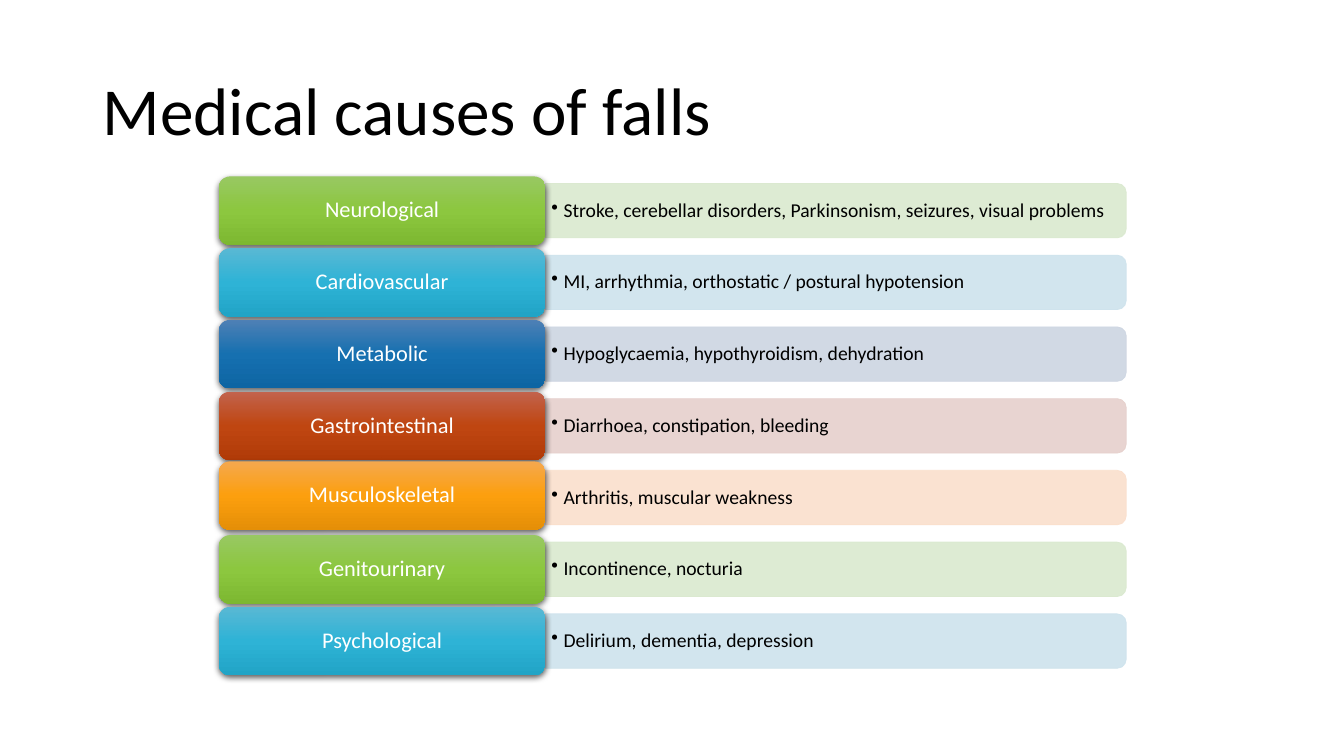
import pptx
import pptx.util
import pptx.oxml
import pptx.oxml.ns
import pptx.dml.color
import pptx.enum.shapes
import pptx.enum.text
import lxml.etree

Inches, Pt = pptx.util.Inches, pptx.util.Pt
qn = pptx.oxml.ns.qn
SHAPE = pptx.enum.shapes.MSO_SHAPE
ALIGN = pptx.enum.text.PP_ALIGN

TITLE = "Medical causes of falls"
CAUSES = [
    ("Neurological", "Stroke, cerebellar disorders, Parkinsonism, seizures, visual problems", "green"),
    ("Cardiovascular", "MI, arrhythmia, orthostatic / postural hypotension", "teal"),
    ("Metabolic", "Hypoglycaemia, hypothyroidism, dehydration", "blue"),
    ("Gastrointestinal", "Diarrhoea, constipation, bleeding", "red"),
    ("Musculoskeletal", "Arthritis, muscular weakness", "orange"),
    ("Genitourinary", "Incontinence, nocturia", "green"),
    ("Psychological", "Delirium, dementia, depression", "teal"),
]
COLORS = {"black": "000000", "white": "FFFFFF"}
TINTS = {"green": "DAE9CF", "teal": "CEE3ED", "blue": "CDD5E2",
         "red": "E6D0CC", "orange": "FADFCC"}
SHADES = {  # top, middle and bottom of each label
    "green": ("98C862", "8CC73F", "7DB831"),
    "teal": ("59B8D4", "2EB3D6", "21A4C6"),
    "blue": ("4E80B5", "1670B0", "0D65A3"),
    "red": ("C2634D", "BF4611", "B13B08"),
    "orange": ("F5A84E", "FC9F0E", "E58F07"),
}
FONT = "Calibri"
LEFT, TOP = 2.17, 1.75
LABEL_W, LABEL_H = 3.24, 0.68
BAR_W, BAR_H = 5.76, 0.54
TEXT_W, TEXT_H = 5.73, 0.49
PITCH = 4.27 / 6
LIFT = {"Musculoskeletal": 0.02}


def rgb(code):
    return pptx.dml.color.RGBColor.from_string(code)


def put_text(shape, text, size, color, align, pad):
    frame = shape.text_frame
    frame.word_wrap = True
    frame.vertical_anchor = pptx.enum.text.MSO_ANCHOR.MIDDLE
    frame.margin_left = frame.margin_right = Inches(pad[0])
    frame.margin_top = frame.margin_bottom = Inches(pad[1])
    line = frame.paragraphs[0]
    line.text = text
    line.alignment = align
    line.line_spacing = 0.9
    font = line.runs[0].font
    font.name, font.size = FONT, Pt(size)
    font.color.rgb = rgb(COLORS[color])
    return line


def add_bar(slide, middle, tint):
    """Draw a tall shape and turn it, so its round corners face right."""
    center = LEFT + LABEL_W + BAR_W / 2
    bar = slide.shapes.add_shape(
        SHAPE.ROUND_2_SAME_RECTANGLE, Inches(center - BAR_H / 2),
        Inches(middle - BAR_W / 2), Inches(BAR_H), Inches(BAR_W))
    bar.rotation = 90
    bar.shadow.inherit = False
    bar.fill.solid()
    bar.fill.fore_color.rgb = rgb(tint)
    bar.line.color.rgb = rgb(tint)
    bar.line.width = Pt(0.5)
    for color in bar._element.spPr.iter(qn("a:srgbClr")):
        lxml.etree.SubElement(color, qn("a:alpha"), val="90000")


def add_detail(slide, middle, text):
    box = slide.shapes.add_textbox(
        Inches(LEFT + LABEL_W), Inches(middle - TEXT_H / 2), Inches(TEXT_W), Inches(TEXT_H))
    line = put_text(box, text, 14, "black", ALIGN.LEFT, (0.06, 0.03))
    props = line._p.get_or_add_pPr()
    props.set("marL", str(Inches(0.12)))
    props.set("indent", str(Inches(-0.12)))
    lxml.etree.SubElement(props, qn("a:buChar"), char="•")


def add_label(slide, top, text, shades):
    label = slide.shapes.add_shape(
        SHAPE.ROUNDED_RECTANGLE, Inches(LEFT), Inches(top), Inches(LABEL_W), Inches(LABEL_H))
    label.adjustments[0] = 0.1667
    label.line.fill.background()
    label.fill.gradient()
    props = label._element.spPr
    stops = props.find(".//" + qn("a:gsLst"))
    for stop in list(stops):
        stops.remove(stop)
    for place, shade in zip((0, 50000, 100000), shades):
        stop = lxml.etree.SubElement(stops, qn("a:gs"), pos=str(place))
        lxml.etree.SubElement(stop, qn("a:srgbClr"), val=shade)
    label.fill.gradient_angle = 270
    label.shadow.inherit = False
    shadow = lxml.etree.SubElement(
        props.find(qn("a:effectLst")), qn("a:outerShdw"), blurRad=str(Pt(4.5)),
        dist=str(Pt(1.5)), dir="5400000", algn="ctr", rotWithShape="0")
    color = lxml.etree.SubElement(shadow, qn("a:srgbClr"), val=COLORS["black"])
    lxml.etree.SubElement(color, qn("a:alpha"), val="63000")
    put_text(label, text, 16, "white", ALIGN.CENTER, (0.1, 0.06))


def main():
    deck = pptx.Presentation()
    deck.slide_width, deck.slide_height = Inches(13.33), Inches(7.5)
    slide = deck.slides.add_slide(deck.slide_layouts[6])
    title = slide.shapes.add_textbox(Inches(0.92), Inches(0.4), Inches(11.5), Inches(1.45))
    put_text(title, TITLE, 48, "black", ALIGN.LEFT, (0.1, 0.05))
    for row, (name, detail, hue) in enumerate(CAUSES):
        top = TOP + row * PITCH
        middle = top + LABEL_H / 2
        add_bar(slide, middle, TINTS[hue])
        add_detail(slide, middle, detail)
        add_label(slide, top - LIFT.get(name, 0), name, SHADES[hue])
    deck.save("out.pptx")


if __name__ == "__main__":
    main()
